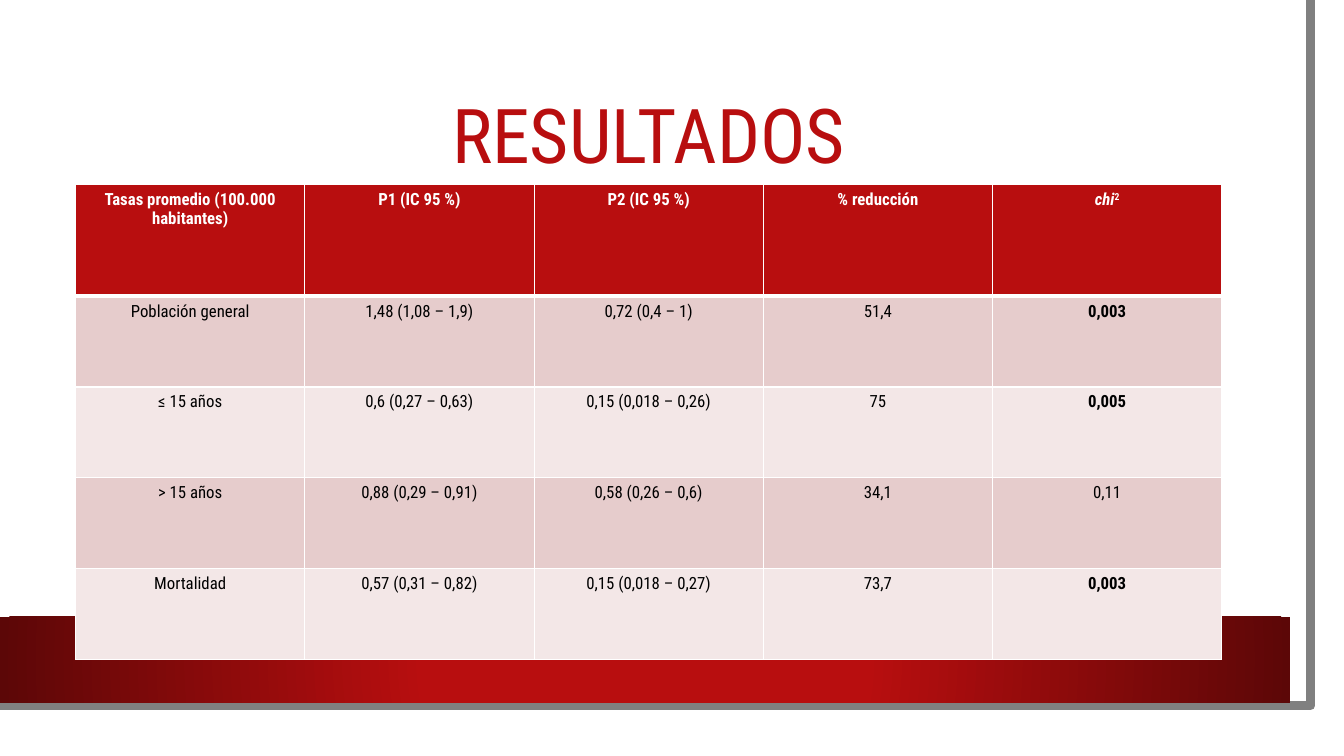
from pptx import Presentation, util as u
from pptx.dml.color import RGBColor
from pptx.enum import shapes, text
from pptx.oxml import parse_xml
from pptx.oxml.ns import nsdecls

RED, DARK_RED, WHITE, BLACK, GREY = "B80E0F", "5C0707", "FFFFFF", "000000", "808080"
ROW_TINTS = ("E6CCCC", "F3E7E7")


def color(hex_string):
    return RGBColor.from_string(hex_string)


class ResultsSlide:
    font = "Roboto Condensed"

    def __init__(self, deck):
        self.slide = deck.slides.add_slide(deck.slide_layouts[5])
        self.shapes = self.slide.shapes

    def add_words(self, paragraph, words, size, hex_string, bold=False, italic=False):
        paragraph.alignment = text.PP_ALIGN.CENTER
        run = paragraph.add_run()
        run.text = words
        font = run.font
        font.name, font.size = self.font, u.Pt(size)
        font.bold, font.italic = bold, italic
        font.color.rgb = color(hex_string)
        return run

    def panel(self, left, top, width, height, fill):
        panel = self.shapes.add_shape(
            shapes.MSO_SHAPE.RECTANGLE, *map(u.Inches, (left, top, width, height)))
        panel.shadow.inherit = False
        panel.line.fill.background()
        panel.fill.solid()
        panel.fill.fore_color.rgb = color(fill)
        return panel

    def glowing_panel(self, left, top, width, height, center, edge):
        panel = self.panel(left, top, width, height, center)
        solid = panel._element.spPr.find("{*}solidFill")
        solid.getparent().replace(solid, parse_xml(
            f'<a:gradFill {nsdecls("a")} rotWithShape="1"><a:gsLst>'
            f'<a:gs pos="34000"><a:srgbClr val="{center}"/></a:gs>'
            f'<a:gs pos="100000"><a:srgbClr val="{edge}"/></a:gs></a:gsLst>'
            '<a:path path="circle"><a:fillToRect l="50000" t="50000" r="50000" b="50000"/>'
            '</a:path></a:gradFill>'))

    def outline(self, points, hex_string, width):
        builder = self.shapes.build_freeform(*points[0], scale=u.Inches(1))
        builder.add_line_segments(points[1:], close=False)
        edge = builder.convert_to_shape()
        edge.shadow.inherit = False
        edge.fill.background()
        edge.line.color.rgb = color(hex_string)
        edge.line.width = u.Pt(width)

    def title(self, words, left, top, width, height):
        title = self.shapes.title
        title.left, title.top, title.width, title.height = map(
            u.Inches, (left, top, width, height))
        # Bring the title in front of the backdrop
        self.shapes._spTree.append(title._element)
        frame = title.text_frame
        frame.word_wrap = True
        frame.vertical_anchor = text.MSO_ANCHOR.MIDDLE
        frame.paragraphs[0].line_spacing = 0.9
        self.add_words(frame.paragraphs[0], words, 54, RED)

    def borders(self, cell, bottom):
        properties = cell._tc.get_or_add_tcPr()
        for side, width in (("L", 1), ("R", 1), ("T", 1), ("B", bottom)):
            properties.append(parse_xml(
                f'<a:ln{side} {nsdecls("a")} w="{u.Pt(width)}"><a:solidFill>'
                f'<a:srgbClr val="{WHITE}"/></a:solidFill></a:ln{side}>'))

    def table(self, rows, left, top, width, row_heights):
        table = self.shapes.add_table(
            len(rows), len(rows[0]), u.Inches(left), u.Inches(top),
            u.Inches(width), u.Inches(sum(row_heights))).table
        for r, row in enumerate(rows):
            table.rows[r].height = u.Inches(row_heights[r])
            header = r == 0
            for c, words in enumerate(row):
                cell = table.cell(r, c)
                self.borders(cell, 3 if header else 1)
                cell.fill.solid()
                cell.fill.fore_color.rgb = color(RED if header else ROW_TINTS[(r - 1) % 2])
                paragraph = cell.text_frame.paragraphs[0]
                ink = WHITE if header else BLACK
                if words == "chi2":
                    self.add_words(paragraph, "chi", 12, ink, bold=True, italic=True)
                    power = self.add_words(paragraph, "2", 12, ink, bold=True)
                    power.font._element.set("baseline", "30000")
                else:
                    significant = words in SIGNIFICANT
                    self.add_words(paragraph, words, 12, ink, bold=header or significant)


SIGNIFICANT = ("0,003", "0,005")
RATES = [
    ("Tasas promedio (100.000 habitantes)", "P1 (IC 95 %)", "P2 (IC 95 %)",
     "% reducción", "chi2"),
    ("Población general", "1,48 (1,08 – 1,9)", "0,72 (0,4 – 1)", "51,4", "0,003"),
    ("≤ 15 años", "0,6 (0,27 – 0,63)", "0,15 (0,018 – 0,26)", "75", "0,005"),
    ("> 15 años", "0,88 (0,29 – 0,91)", "0,58 (0,26 – 0,6)", "34,1", "0,11"),
    ("Mortalidad", "0,57 (0,31 – 0,82)", "0,15 (0,018 – 0,27)", "73,7", "0,003"),
]


def main():
    deck = Presentation()
    deck.slide_width, deck.slide_height = u.Inches(13.33), u.Inches(7.5)
    results = ResultsSlide(deck)

    # Backdrop: sheet, its grey edge and the red band
    results.panel(0, 0, 13.1, 7.27, WHITE)
    results.outline([(12.82, 0), (12.85, 7.02), (-0.03, 7.01)], GREY, 6.5)
    results.glowing_panel(0, 6.12, 12.8, 0.85, RED, DARK_RED)

    # Title and table of rates
    results.title("RESULTADOS", 0.75, 0.75, 11.37, 1.26)
    results.table(RATES, 0.75, 1.83, 11.37, [1.11] + [0.9] * 4)

    deck.save("out.pptx")


if __name__ == "__main__":
    main()
